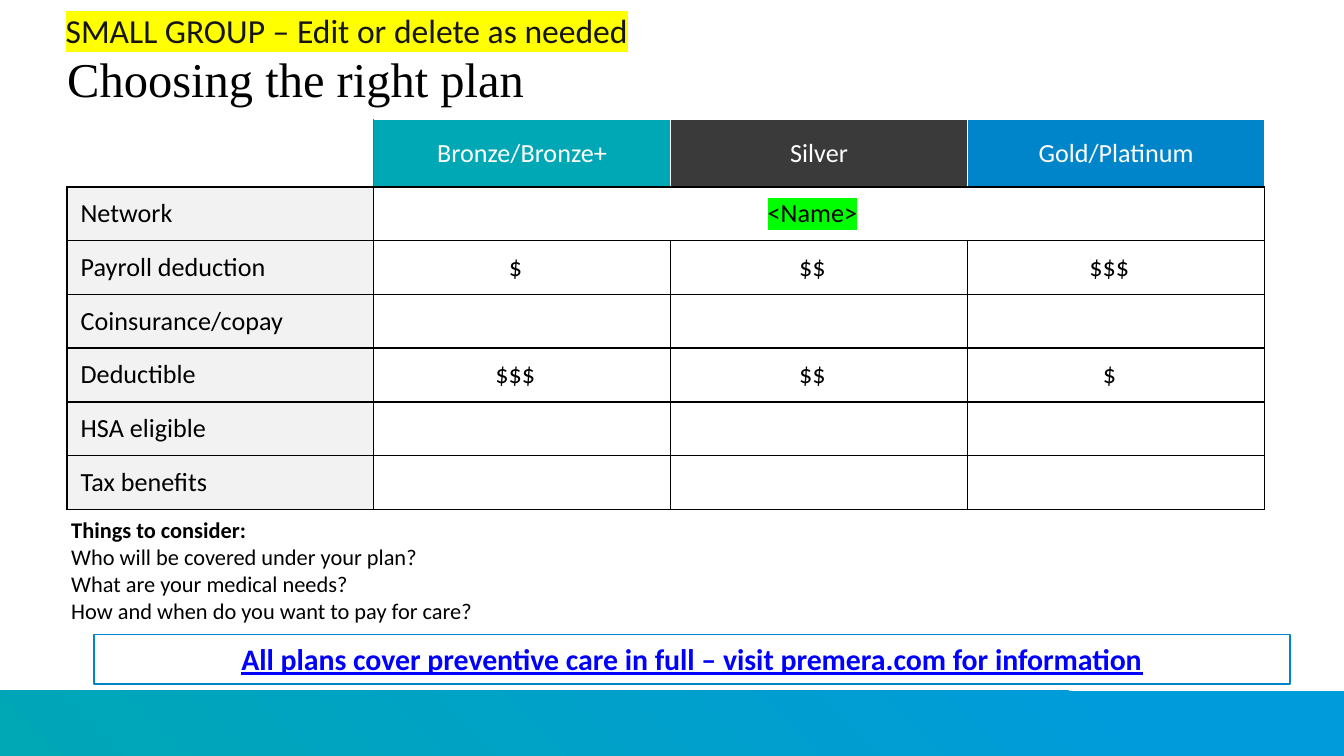
"""Build the plan comparison slide with its table, notes and link banner."""
from dataclasses import dataclass

from lxml import etree
from pptx import Presentation
from pptx.dml.color import RGBColor
from pptx.enum.shapes import MSO_SHAPE
from pptx.enum.text import MSO_ANCHOR, MSO_AUTO_SIZE, PP_ALIGN
from pptx.oxml.ns import qn
from pptx.util import Inches, Pt

LEFT, CENTER = PP_ALIGN.LEFT, PP_ALIGN.CENTER
MIDDLE, BOTTOM, TOP = MSO_ANCHOR.MIDDLE, MSO_ANCHOR.BOTTOM, MSO_ANCHOR.TOP
RECT = MSO_SHAPE.RECTANGLE
FIT, FIXED = MSO_AUTO_SIZE.SHAPE_TO_FIT_TEXT, MSO_AUTO_SIZE.NONE
BLACK, WHITE, BLUE, TEAL = "000000", "FFFFFF", "0085CA", "00A7B5"
GRAY = "F2F2F2"


@dataclass
class Style:
    size: float
    color: str = BLACK
    font: str = "Calibri"
    bold: bool = False
    under: bool = False
    mark: str = ""


@dataclass
class Plan:
    name: str
    fill: str
    edges: tuple


@dataclass
class Row:
    label: str
    values: tuple = ("", "", "")
    mark: str = ""


PLANS = [
    Plan("", "", (WHITE, BLUE, WHITE, BLACK)),
    Plan("Bronze/Bronze+", TEAL, (BLUE, WHITE, WHITE, BLACK)),
    Plan("Silver", "3A3A3A", (WHITE, WHITE, WHITE, BLACK)),
    Plan("Gold/Platinum", BLUE, (WHITE, WHITE, WHITE, BLACK)),
]
ROWS = [
    Row("Network", ("<Name>", "", ""), "00FF00"),
    Row("Payroll deduction", ("$", "$$", "$$$")),
    Row("Coinsurance/copay"),
    Row("Deductible", ("$$$", "$$", "$")),
    Row("HSA eligible"),
    Row("Tax benefits"),
]
NOTES = [
    "Things to consider:",
    "Who will be covered under your plan?",
    "What are your medical needs?",
    "How and when do you want to pay for care?",
]


def rgb(code: str) -> RGBColor:
    return RGBColor.from_string(code)


def box(*nums: float) -> list:
    return [Inches(num) for num in nums]


def place(shape, *nums: float) -> None:
    shape.left, shape.top, shape.width, shape.height = box(*nums)


def write(para, text: str, style: Style, align=LEFT) -> None:
    para.alignment = align
    run = para.add_run()
    run.text = text
    font = run.font
    font.size, font.name = Pt(style.size), style.font
    font.bold, font.underline = style.bold, style.under
    font.color.rgb = rgb(style.color)
    if style.mark:
        mark = etree.Element(qn("a:highlight"))
        etree.SubElement(mark, qn("a:srgbClr"), val=style.mark)
        run.font._element.find(qn("a:solidFill")).addnext(mark)


def frame(shape, anchor, fit, left: float = 0.1):
    text = shape.text_frame
    text.word_wrap, text.auto_size = True, fit
    text.vertical_anchor = anchor
    text.margin_left, text.margin_right = box(left, 0.1)
    text.margin_top = text.margin_bottom = Inches(0.05)
    return text


def edge(cell, colors: tuple) -> None:
    props = cell._tc.get_or_add_tcPr()
    for side, color in zip("LRTB", colors):
        line = etree.SubElement(props, qn(f"a:ln{side}"), w=str(Pt(1)))
        fill = etree.SubElement(line, qn("a:solidFill"))
        etree.SubElement(fill, qn("a:srgbClr"), val=color)


def fill_cell(cell, text: str, style: Style, fill: str = "", align=CENTER,
              left: float = 0.1, edges: tuple = (BLACK,) * 4) -> None:
    edge(cell, edges)
    if fill:
        cell.fill.solid()
        cell.fill.fore_color.rgb = rgb(fill)
    else:
        cell.fill.background()
    cell.vertical_anchor = MIDDLE
    cell.margin_left = Inches(left)
    if text:
        write(cell.text_frame.paragraphs[0], text, style, align)
    else:
        cell.margin_top = cell.margin_bottom = Inches(0.03)


def add_band(slide) -> None:
    band = slide.shapes.add_shape(RECT, *box(0, 5.14, 10, 0.49))
    band.rotation = 180
    band.shadow.inherit = False
    band.line.fill.background()
    band.fill.gradient()
    band.fill.gradient_angle = 45
    for stop, color, pos in zip(band.fill.gradient_stops,
                                ("009BDB", TEAL), (0.15, 1)):
        stop.color.rgb, stop.position = rgb(color), pos


def add_plans(slide) -> None:
    table = slide.shapes.add_table(len(ROWS) + 1, len(PLANS),
                                   *box(0.5, 0.89, 8.9, 2.9)).table
    table.first_row = table.horz_banding = False
    for num, col in enumerate(table.columns):
        col.width = Inches(2.21 if num else 2.28)
    for num, row in enumerate(table.rows):
        row.height = Inches(0.4 if num else 0.5)
    for num, plan in enumerate(PLANS):
        fill_cell(table.cell(0, num), plan.name, Style(14, WHITE),
                  plan.fill, edges=plan.edges)
    for num, row in enumerate(ROWS, 1):
        fill_cell(table.cell(num, 0), row.label, Style(14), GRAY, LEFT)
        for col, value in enumerate(row.values, 1):
            fill_cell(table.cell(num, col), value,
                      Style(14, mark=row.mark), left=0)
    table.cell(1, 1).merge(table.cell(1, 3))


def add_notes(body) -> None:
    place(body, 0.53, 3.79, 9.1, 0.91)
    text = frame(body, TOP, FIT, 0)
    for num, note in enumerate(NOTES):
        para = text.add_paragraph() if num else text.paragraphs[0]
        props = para._p.get_or_add_pPr()
        props.set("marL", "0")
        props.set("indent", "0")
        etree.SubElement(props, qn("a:buNone"))
        para.space_before = Pt(0)
        write(para, note, Style(12, bold=num == 0))


def add_link(slide) -> None:
    link = slide.shapes.add_shape(RECT, *box(0.7, 4.72, 8.9, 0.37))
    link.shadow.inherit = False
    link.fill.solid()
    link.fill.fore_color.rgb = rgb(WHITE)
    link.line.color.rgb, link.line.width = rgb(BLUE), Pt(0.75)
    write(frame(link, TOP, FIT).paragraphs[0],
          "All plans cover preventive care in full – "
          "visit premera.com for information",
          Style(16, "0000FF", bold=True, under=True), CENTER)


def main() -> None:
    deck = Presentation()
    deck.slide_width = Inches(10)
    deck.slide_height = deck.slide_width * 9 // 16
    slide = deck.slides.add_slide(deck.slide_layouts[1])
    add_band(slide)
    title = slide.shapes.title
    place(title, 0.5, 0, 9.29, 0.85)
    write(frame(title, BOTTOM, FIXED, 0).paragraphs[0],
          "Choosing the right plan", Style(26, font="Times New Roman"))
    label = slide.shapes.add_textbox(*box(0.39, 0.02, 5.24, 0.4))
    write(frame(label, BOTTOM, FIT).paragraphs[0],
          "SMALL GROUP – Edit or delete as needed",
          Style(18, "151515", mark="FFFF00"))
    add_plans(slide)
    add_notes(slide.placeholders[1])
    add_link(slide)
    deck.save("out.pptx")


if __name__ == "__main__":
    main()
